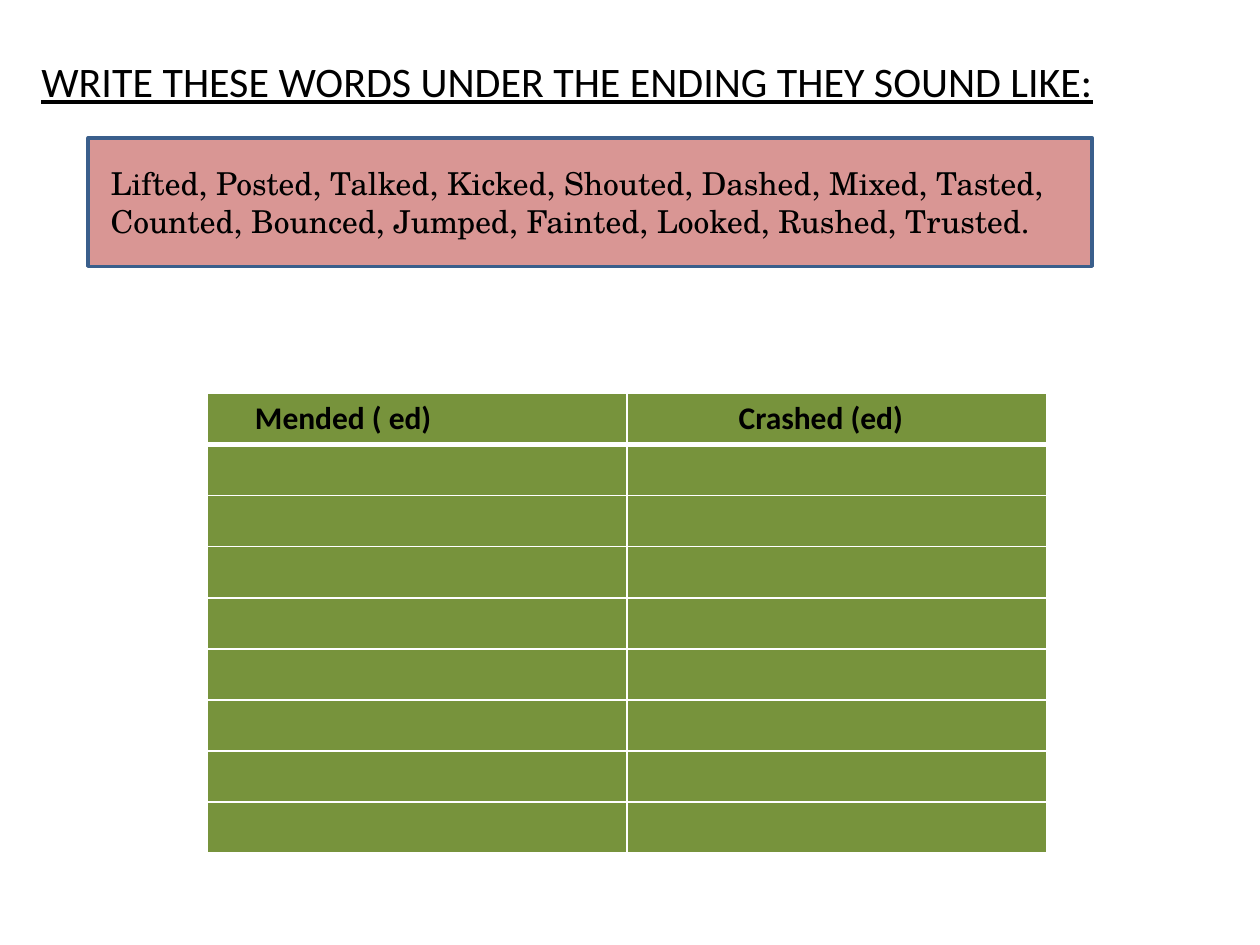
from lxml import etree
from pptx import Presentation
from pptx.dml.color import RGBColor
from pptx.enum.shapes import MSO_SHAPE as Preset
from pptx.enum.text import MSO_ANCHOR as Anchor, MSO_AUTO_SIZE as AutoSize, PP_ALIGN as Align
from pptx.oxml.ns import qn
from pptx.util import Cm, Pt

# Content
TITLE = "WRITE THESE WORDS UNDER THE ENDING THEY SOUND LIKE:"
WORDS = ["Lifted", "Posted", "Talked", "Kicked", "Shouted", "Dashed", "Mixed", "Tasted",
         "Counted", "Bounced", "Jumped", "Fainted", "Looked", "Rushed", "Trusted"]
HEADINGS = [("Mended ( ed)", 0.97), ("Crashed (ed)", 2.25)]  # text, left indent in cm
ANSWER_ROWS = 8

# Look
BLACK, WHITE, PINK, BLUE, GREEN = "000000", "FFFFFF", "D99694", "3A5F8C", "77933C"
COLUMN_WIDTH, ROW_HEIGHT = 8.47, 1.03


def paint(color_format, color):
    color_format.rgb = RGBColor.from_string(color)


def fill(item, color):
    item.fill.solid()
    paint(item.fill.fore_color, color)


def write(frame, text, font, size, bold=False, underline=False):
    frame.text = text
    para = frame.paragraphs[0]
    para.alignment = Align.LEFT
    for span in para.runs:
        span.font.name, span.font.size = font, Pt(size)
        span.font.bold, span.font.underline = bold, underline
        paint(span.font.color, BLACK)


def add_borders(cell, widths):
    properties = cell._tc.get_or_add_tcPr()
    for index, (side, width) in enumerate(widths.items()):
        line = etree.Element(qn(f"a:ln{side}"), w=str(Pt(width)))
        solid = etree.SubElement(line, qn("a:solidFill"))
        etree.SubElement(solid, qn("a:srgbClr"), val=WHITE)
        properties.insert(index, line)


deck = Presentation()
deck.slide_width, deck.slide_height = Cm(25.4), Cm(19.05)
page = deck.slides.add_slide(deck.slide_layouts[5])

# Title
title = page.shapes.title
title.left, title.top, title.width, title.height = Cm(0.58), Cm(1), Cm(21.92), Cm(1.28)
write(title.text_frame, TITLE, "Calibri", 24, underline=True)
title.text_frame.word_wrap = False
title.text_frame.auto_size = AutoSize.SHAPE_TO_FIT_TEXT
title.text_frame.vertical_anchor = Anchor.TOP

# Word bank
panel = page.shapes.add_shape(Preset.RECTANGLE, Cm(1.78), Cm(2.78), Cm(20.24), Cm(2.59))
panel.shadow.inherit = False
fill(panel, PINK)
paint(panel.line.color, BLUE)
panel.line.width = Pt(2)

word_box = page.shapes.add_textbox(Cm(1.98), Cm(3.18), Cm(19.63), Cm(1.8))
write(word_box.text_frame, ", ".join(WORDS) + ".", "TeX Gyre Schola", 18)
word_box.text_frame.word_wrap = True
word_box.text_frame.auto_size = AutoSize.SHAPE_TO_FIT_TEXT

# Answer table
row_count, column_count = ANSWER_ROWS + 1, len(HEADINGS)
table = page.shapes.add_table(row_count, column_count, Cm(4.17), Cm(7.93),
                              Cm(COLUMN_WIDTH * column_count), Cm(ROW_HEIGHT * row_count)).table
for column in table.columns:
    column.width = Cm(COLUMN_WIDTH)
for number, row in enumerate(table.rows):
    row.height = Cm(ROW_HEIGHT)
    for cell in row.cells:
        fill(cell, GREEN)
        add_borders(cell, {"L": 1, "R": 1, "T": 3 if number == 1 else 1,
                           "B": 3 if number == 0 else 1})
for cell, (heading, indent) in zip(table.rows[0].cells, HEADINGS):
    write(cell.text_frame, heading, "Calibri", 18, bold=True)
    cell.margin_left = Cm(indent)

deck.save("out.pptx")
